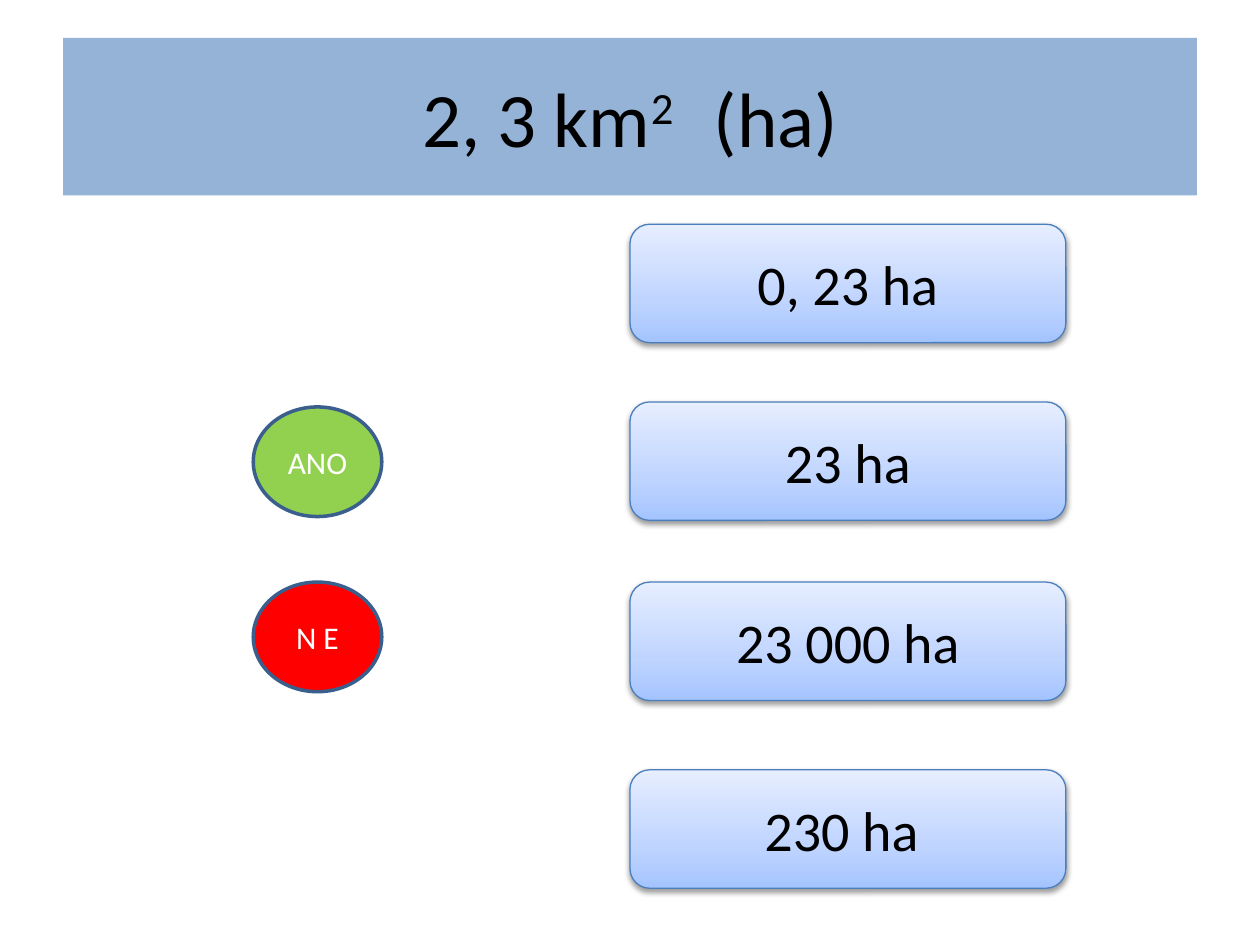
"""Build a quiz slide on converting square kilometres to hectares."""
import copy

import lxml.etree
import pptx
import pptx.dml.color
import pptx.enum.shapes
import pptx.enum.text
import pptx.oxml.ns
import pptx.util

RGB = pptx.dml.color.RGBColor
BLACK = RGB(0x00, 0x00, 0x00)
WHITE = RGB(0xFF, 0xFF, 0xFF)
BAND = RGB(0x95, 0xB3, 0xD7)
GREEN = RGB(0x92, 0xD0, 0x50)
RED = RGB(0xFF, 0x00, 0x00)
RIM = RGB(0x3A, 0x5F, 0x8C)
EDGE = RGB(0x4B, 0x7E, 0xBC)
FADE = [(0, RGB(0xA4, 0xC4, 0xFF)), (0.35, RGB(0xBF, 0xD4, 0xFF)),
        (1, RGB(0xE6, 0xEE, 0xFF))]
PX = 9144
KIND = pptx.enum.shapes.MSO_SHAPE
qn = pptx.oxml.ns.qn


def style(shape, size, color):
    frame = shape.text_frame
    frame.word_wrap = True
    frame.vertical_anchor = pptx.enum.text.MSO_ANCHOR.MIDDLE
    para = frame.paragraphs[0]
    para.alignment = pptx.enum.text.PP_ALIGN.CENTER
    para.font.name = "Calibri"
    para.font.size = pptx.util.Pt(size)
    para.font.color.rgb = color


def button(kind, box, text, size, color, edge, width):
    shape = slide.shapes.add_shape(kind, *[n * PX for n in box])
    shape.shadow.inherit = False
    shape.line.color.rgb = edge
    shape.line.width = pptx.util.Pt(width)
    shape.text_frame.text = text
    style(shape, size, color)
    return shape


deck = pptx.Presentation()
deck.slide_width = 1000 * PX
deck.slide_height = 750 * PX
slide = deck.slides.add_slide(deck.slide_layouts[5])

title = slide.shapes.title
title.left, title.top, title.width, title.height = [
    n * PX for n in (50, 30, 900, 125)]
title.fill.solid()
title.fill.fore_color.rgb = BAND
para = title.text_frame.paragraphs[0]
for text, key, value in [("2, 3 km", "baseline", "0"), ("2", "baseline", "30000"),
                         (" ", "spc", "1300"), ("(ha)", "baseline", "0")]:
    run = para.add_run()
    run.text = text
    run.font.size = pptx.util.Pt(44)
    title.element.findall(".//" + qn("a:rPr"))[-1].set(key, value)
style(title, 44, BLACK)

for top, text, color in [(323, "ANO", GREEN), (462, "N E", RED)]:
    oval = button(KIND.OVAL, (201, top, 102, 87), text, 18, WHITE, RIM, 2)
    oval.fill.solid()
    oval.fill.fore_color.rgb = color

for top, text in [(178, "0, 23 ha"), (319, "23 ha"),
                  (462, "23 000 ha"), (611, "230 ha ")]:
    card = button(KIND.ROUNDED_RECTANGLE, (500, top, 346, 94), text, 32,
                  BLACK, EDGE, 0.75)
    card.fill.gradient()
    card.fill.gradient_angle = 90
    stops = card.element.find(".//" + qn("a:gsLst"))
    stops.insert(1, copy.deepcopy(stops[0]))
    for stop, (place, color) in zip(card.fill.gradient_stops, FADE):
        stop.position = place
        stop.color.rgb = color
    glow = card.element.find(".//" + qn("a:effectLst"))
    shade = lxml.etree.SubElement(glow, qn("a:outerShdw"), blurRad="40000",
                                  dist="20000", dir="5400000", rotWithShape="0")
    tint = lxml.etree.SubElement(shade, qn("a:srgbClr"), val="000000")
    lxml.etree.SubElement(tint, qn("a:alpha"), val="38000")

deck.save("out.pptx")
